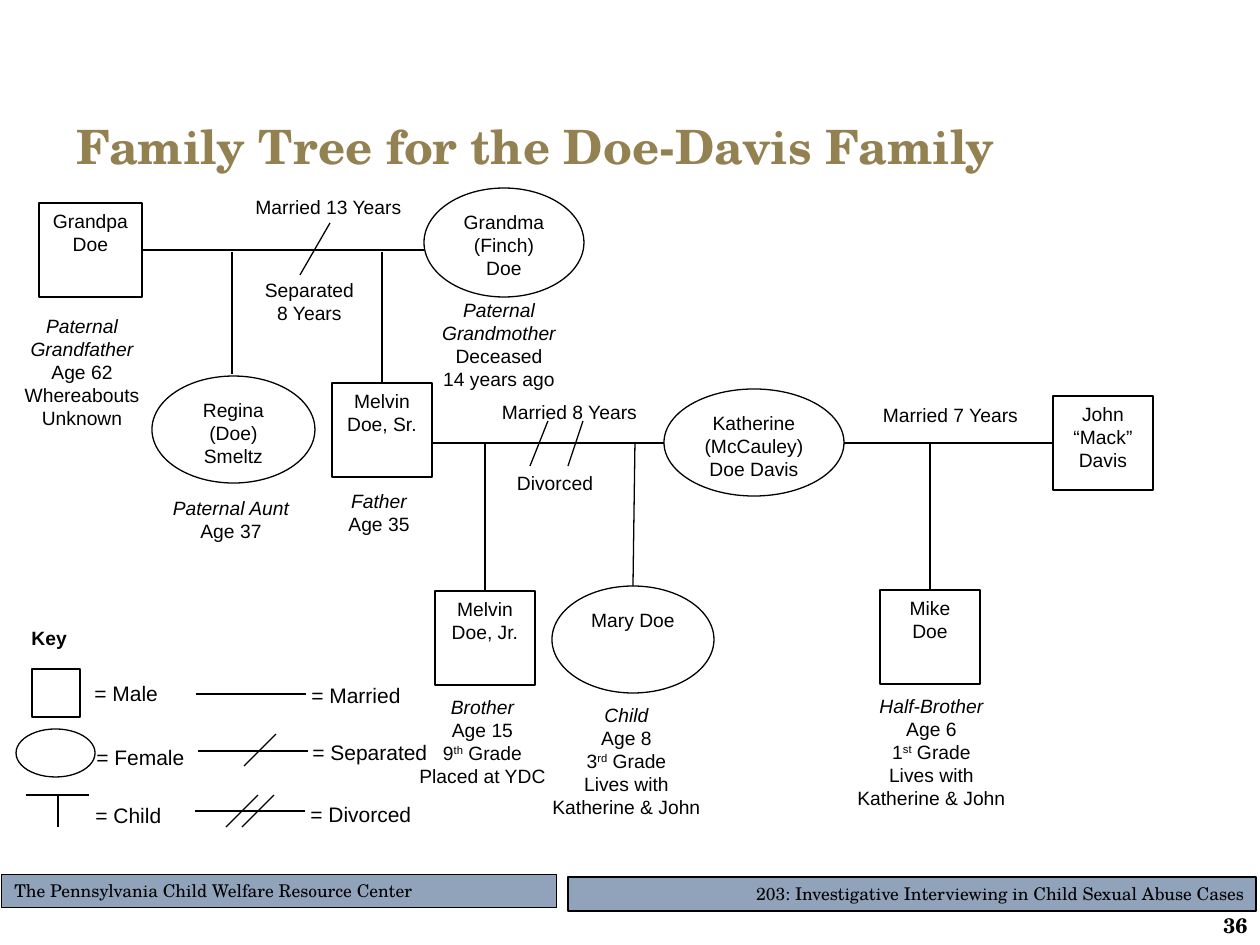
from dataclasses import dataclass
from typing import Optional

from lxml.etree import SubElement
from pptx import Presentation
from pptx.dml.color import RGBColor
from pptx.enum.shapes import MSO_CONNECTOR, MSO_SHAPE
from pptx.enum.text import MSO_ANCHOR, PP_ALIGN
from pptx.oxml.ns import qn
from pptx.util import Emu, Pt

PX_PER_INCH = 126
TOP, LEFT, BOTTOM, RIGHT = range(4)


@dataclass(frozen=True)
class Theme:
    ink: RGBColor = RGBColor(0x00, 0x00, 0x00)
    paper: RGBColor = RGBColor(0xFF, 0xFF, 0xFF)
    footer: RGBColor = RGBColor(0x91, 0xA3, 0xBB)
    title: RGBColor = RGBColor(0x94, 0x81, 0x51)
    serif: str = "TeX Gyre Schola"
    sans: str = "Arial"
    title_size: int = 27
    number_size: int = 12
    footer_size: int = 10
    tree_size: int = 11
    key_size: int = 12
    line_width: float = 0.75
    thin_line: float = 0.5


THEME = Theme()


@dataclass(frozen=True)
class Box:
    left: int
    top: int
    width: int
    height: int


@dataclass(frozen=True)
class Person:
    name: str
    box: Box
    female: bool = False


@dataclass(frozen=True)
class Joint:
    person: str
    side: int


@dataclass(frozen=True)
class Line:
    x1: int
    y1: int
    x2: int
    y2: int
    begin: Optional[Joint] = None
    end: Optional[Joint] = None


@dataclass(frozen=True)
class Label:
    """Lines of text; a part between two carets is raised."""
    box: Box
    lines: tuple[str, ...]
    relation_first: bool = False


PEOPLE = (
    Person("Grandpa Doe", Box(39, 203, 103, 94)),
    Person("Grandma (Finch) Doe", Box(424, 188, 160, 109), female=True),
    Person("Regina (Doe) Smeltz", Box(152, 376, 163, 107), female=True),
    Person("Melvin Doe, Sr.", Box(332, 383, 100, 94)),
    Person("Katherine (McCauley) Doe Davis", Box(664, 389, 180, 107), female=True),
    Person("John “Mack” Davis", Box(1053, 396, 100, 94)),
    Person("Mike Doe", Box(880, 590, 100, 94)),
    Person("Mary Doe", Box(552, 586, 162, 107), female=True),
    Person("Melvin Doe, Jr.", Box(435, 591, 100, 94)),
)

TREE_LINES = (
    Line(142, 250, 424, 250, begin=Joint("Grandpa Doe", RIGHT)),
    Line(300, 275, 330, 223),
    Line(232, 252, 232, 374),
    Line(382, 252, 382, 383, end=Joint("Melvin Doe, Sr.", TOP)),
    Line(432, 443, 664, 443),
    Line(844, 443, 1053, 443, end=Joint("John “Mack” Davis", LEFT)),
    Line(930, 443, 930, 590, end=Joint("Mike Doe", TOP)),
    Line(635, 443, 633, 586, end=Joint("Mary Doe", TOP)),
    Line(485, 443, 485, 591, end=Joint("Melvin Doe, Jr.", TOP)),
    Line(548, 421, 530, 466),
    Line(583, 421, 568, 466),
)

LABELS = (
    Label(Box(11, 308, 142, 130),
          ("Paternal Grandfather", "Age 62", "Whereabouts", "Unknown"), True),
    Label(Box(160, 490, 142, 59), ("Paternal Aunt", "Age 37"), True),
    Label(Box(308, 483, 142, 59), ("Father", "Age 35"), True),
    Label(Box(428, 292, 142, 106),
          ("Paternal Grandmother", "Deceased", "14 years ago"), True),
    Label(Box(844, 688, 175, 130),
          ("Half-Brother", "Age 6", "1^st^ Grade", "Lives with Katherine & John"), True),
    Label(Box(539, 697, 175, 130),
          ("Child", "Age 8", "3^rd^ Grade", "Lives with Katherine & John"), True),
    Label(Box(395, 689, 175, 106),
          ("Brother", "Age 15", "9^th^ Grade", "Placed at YDC"), True),
    Label(Box(484, 465, 142, 37), ("Divorced",)),
    Label(Box(475, 394, 189, 37), ("Married 8 Years",)),
    Label(Box(856, 397, 189, 37), ("Married 7 Years",)),
    Label(Box(234, 189, 189, 37), ("Married 13 Years",)),
    Label(Box(215, 272, 189, 59), ("Separated", "8 Years")),
)

KEY_LINES = (
    Line(26, 795, 89, 795), Line(58, 795, 58, 827),
    Line(196, 694, 306, 694),
    Line(198, 751, 308, 751), Line(244, 766, 276, 734),
    Line(195, 811, 305, 811), Line(226, 827, 258, 795), Line(242, 827, 274, 795),
)

KEY_LABELS = (
    Label(Box(82, 674, 89, 38), ("= Male",)),
    Label(Box(84, 738, 115, 38), ("= Female",)),
    Label(Box(83, 796, 92, 38), ("= Child",)),
    Label(Box(299, 676, 116, 38), ("= Married",)),
    Label(Box(300, 733, 141, 38), ("= Separated",)),
    Label(Box(298, 795, 127, 38), ("= Divorced",)),
)


def px(value: int) -> Emu:
    return Emu(round(value * 914400 / PX_PER_INCH))


def place(box: Box) -> tuple[Emu, ...]:
    return px(box.left), px(box.top), px(box.width), px(box.height)


def write(shape, *lines: str, size=THEME.tree_size, font=THEME.sans, color=THEME.ink,
          align=PP_ALIGN.CENTER, anchor=MSO_ANCHOR.TOP, bold=False,
          italic_first=False, wrap=True) -> None:
    frame = shape.text_frame
    frame.word_wrap = wrap
    frame.vertical_anchor = anchor
    for index, line in enumerate(lines):
        paragraph = frame.add_paragraph() if index else frame.paragraphs[0]
        paragraph.alignment = align
        for part, text in enumerate(line.split("^")):
            run = paragraph.add_run()
            run.text = text
            run.font.name, run.font.size = font, Pt(size)
            run.font.color.rgb = color
            run.font.bold = bold
            run.font.italic = italic_first and index == 0
            if part % 2:
                run._r.get_or_add_rPr().set("baseline", "30000")


def add_text(slide, box: Box, *lines: str, **text_format) -> None:
    write(slide.shapes.add_textbox(*place(box)), *lines, **text_format)


def add_outlined(slide, box: Box, kind=MSO_SHAPE.RECTANGLE, fill=THEME.paper,
                 width=THEME.line_width):
    shape = slide.shapes.add_shape(kind, *place(box))
    shape.shadow.inherit = False
    shape.fill.solid()
    shape.fill.fore_color.rgb = fill
    shape.line.color.rgb = THEME.ink
    shape.line.width = Pt(width)
    return shape


def add_person(slide, person: Person):
    kind = MSO_SHAPE.OVAL if person.female else MSO_SHAPE.RECTANGLE
    shape = add_outlined(slide, person.box, kind)
    write(shape, person.name)
    return shape


def add_line(slide, line: Line, people: dict) -> None:
    connector = slide.shapes.add_connector(
        MSO_CONNECTOR.STRAIGHT, px(line.x1), px(line.y1), px(line.x2), px(line.y2))
    if line.begin:
        connector.begin_connect(people[line.begin.person], line.begin.side)
    if line.end:
        connector.end_connect(people[line.end.person], line.end.side)
    connector.line.color.rgb = THEME.ink
    connector.line.width = Pt(THEME.line_width)
    SubElement(connector._element.spPr, qn("a:effectLst"))


def add_frame(slide) -> None:
    """Footer bars, title and page number."""
    footer_format = dict(size=THEME.footer_size, font=THEME.serif)
    course = add_outlined(slide, Box(568, 877, 688, 34), fill=THEME.footer)
    write(course, "203: Investigative Interviewing in Child Sexual Abuse Cases",
          align=PP_ALIGN.RIGHT, **footer_format)
    center = add_outlined(slide, Box(2, 874, 555, 34), fill=THEME.footer,
                          width=THEME.thin_line)
    write(center, "The Pennsylvania Child Welfare Resource Center",
          align=PP_ALIGN.LEFT, **footer_format)
    heading_format = dict(font=THEME.serif, bold=True, anchor=MSO_ANCHOR.MIDDLE)
    add_text(slide, Box(64, 105, 1134, 82), "Family Tree for the Doe-Davis Family",
             size=THEME.title_size, color=THEME.title, align=PP_ALIGN.LEFT, **heading_format)
    add_text(slide, Box(1120, 912, 140, 27), "36", size=THEME.number_size,
             align=PP_ALIGN.RIGHT, **heading_format)


def add_tree(slide) -> None:
    people = {person.name: add_person(slide, person) for person in PEOPLE}
    for line in TREE_LINES:
        add_line(slide, line, people)
    for label in LABELS:
        add_text(slide, label.box, *label.lines, italic_first=label.relation_first)


def add_key(slide) -> None:
    add_text(slide, Box(19, 620, 142, 37), "Key", align=PP_ALIGN.LEFT, bold=True)
    add_outlined(slide, Box(32, 669, 48, 48))
    add_outlined(slide, Box(16, 729, 79, 48), MSO_SHAPE.OVAL)
    for line in KEY_LINES:
        add_line(slide, line, {})
    for label in KEY_LABELS:
        add_text(slide, label.box, *label.lines, size=THEME.key_size,
                 align=PP_ALIGN.LEFT, wrap=False)


def main() -> None:
    presentation = Presentation()
    presentation.slide_width, presentation.slide_height = px(1260), px(945)
    slide = presentation.slides.add_slide(presentation.slide_layouts[6])
    add_frame(slide)
    add_tree(slide)
    add_key(slide)
    presentation.save("out.pptx")


if __name__ == "__main__":
    main()
